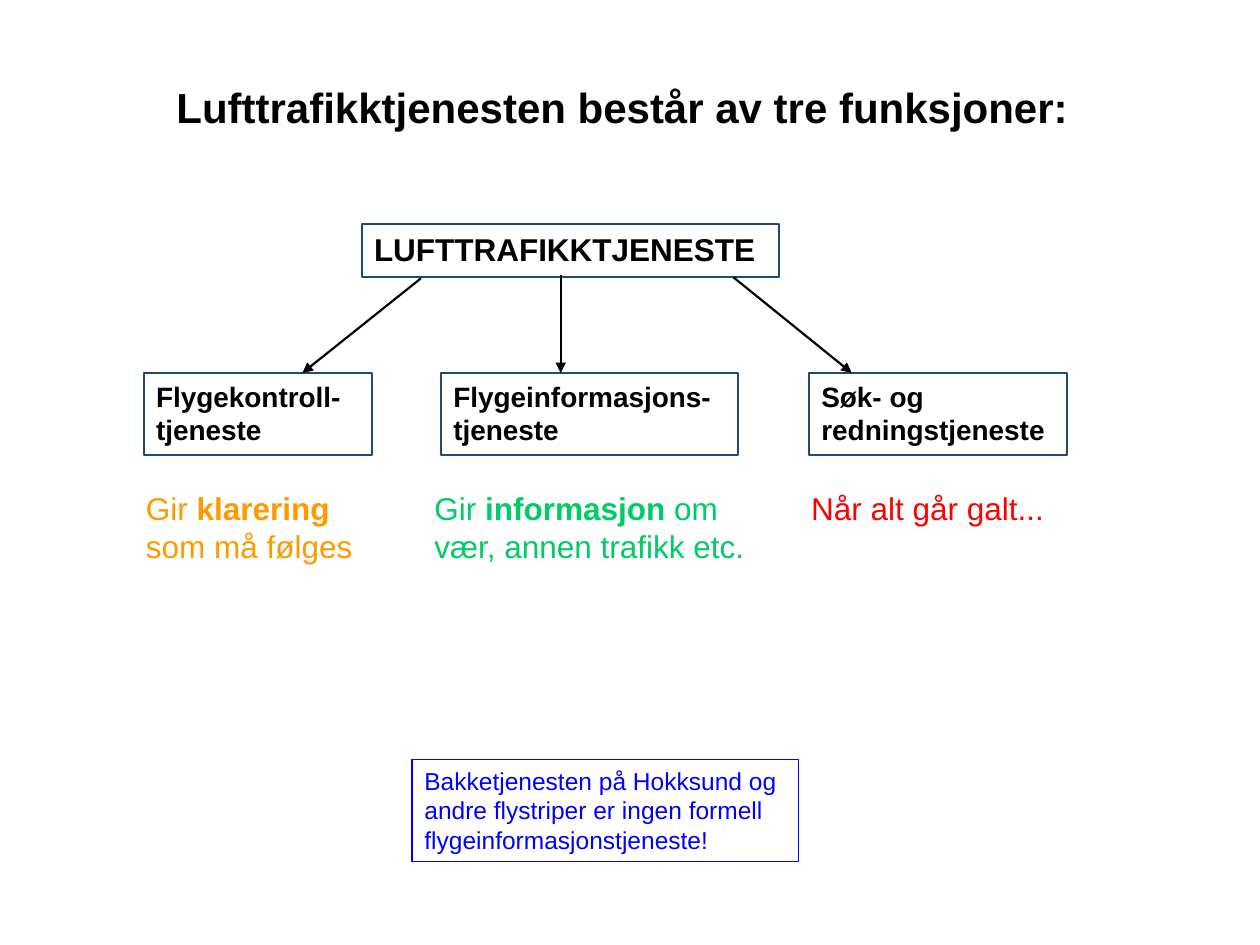
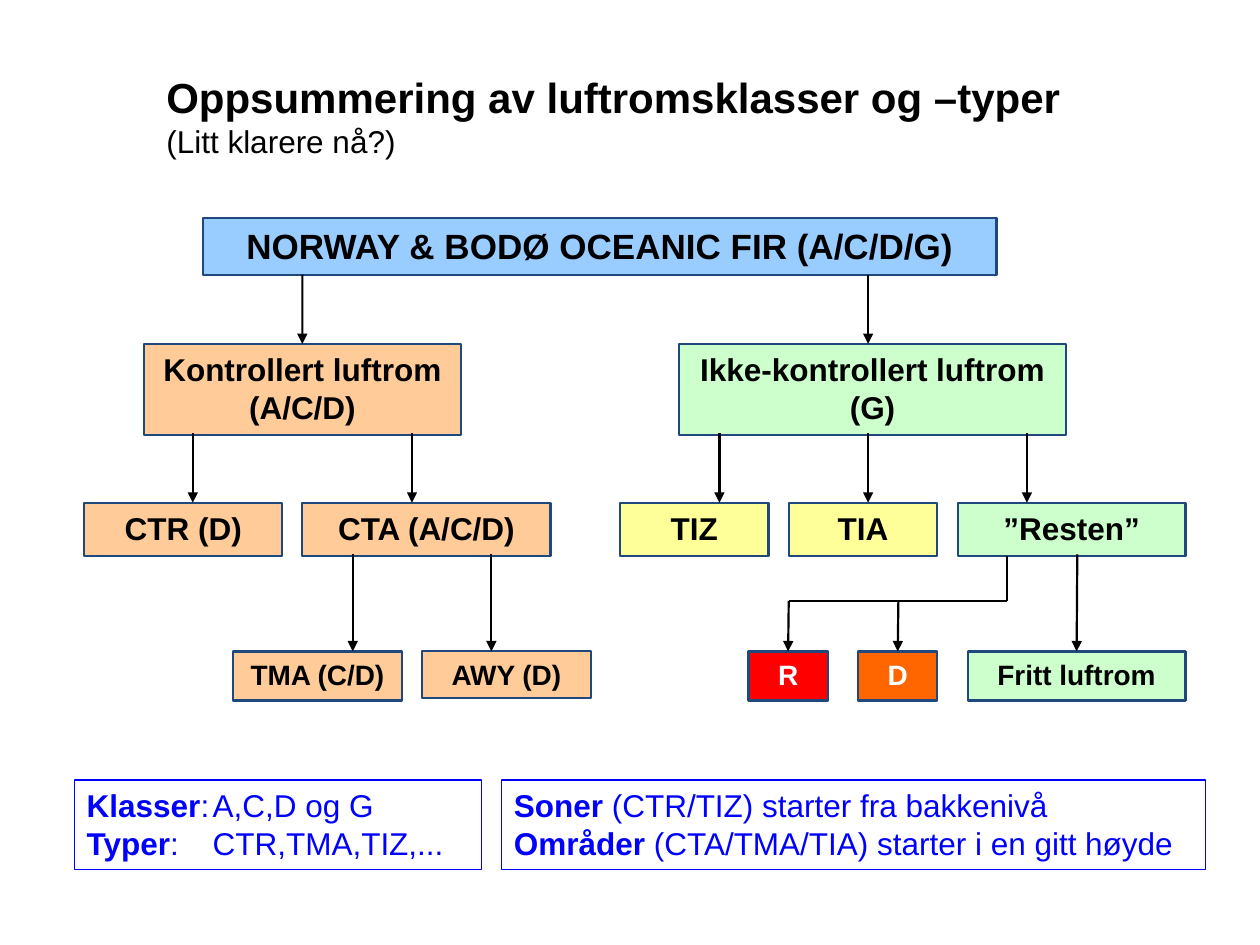
import pptx
import pptx.util
import pptx.dml.color
import pptx.enum.shapes
import pptx.enum.text
import pptx.oxml.ns
import lxml.etree
from pptx.util import Inches

COLOURS = {
    "text": "000000", "white": "FFFFFF", "border": "1F497D", "note": "0000FF",
    "clearance": "FF9900", "information": "00CC66", "rescue": "FF0000",
    "region": "99CCFF", "controlled": "FFCC99", "uncontrolled": "CCFFCC",
    "traffic_information": "FFFF99", "restricted": "FF0000", "danger": "FF6600",
}
RECTANGLE = pptx.enum.shapes.MSO_SHAPE.RECTANGLE
LEFT = pptx.enum.text.PP_ALIGN.LEFT
CENTER = pptx.enum.text.PP_ALIGN.CENTER


def write_text(shape, runs, size, colour="text", align=LEFT, border=None, fill=None, border_width=1.25):
    """Fill a shape with one paragraph of (text, bold) runs; a newline breaks the line."""
    if border:
        shape.shadow.inherit = False
        shape.line.color.rgb = pptx.dml.color.RGBColor.from_string(COLOURS[border])
        shape.line.width = pptx.util.Pt(border_width)
        if fill:
            shape.fill.solid()
            shape.fill.fore_color.rgb = pptx.dml.color.RGBColor.from_string(COLOURS[fill])
        else:
            shape.fill.background()
    frame = shape.text_frame
    frame.word_wrap = True
    frame.auto_size = pptx.enum.text.MSO_AUTO_SIZE.NONE
    frame.vertical_anchor = pptx.enum.text.MSO_ANCHOR.TOP
    paragraph = frame.paragraphs[0]
    paragraph.alignment = align
    paragraph.font.name = "Arial"
    paragraph.font.size = pptx.util.Pt(size)
    paragraph.font.color.rgb = pptx.dml.color.RGBColor.from_string(COLOURS[colour])
    same_weight = len({bold for _, bold in runs}) == 1
    if same_weight:
        paragraph.font.bold = runs[0][1]
    for text, bold in runs:
        for number, line in enumerate(text.split("\n")):
            if number:
                paragraph.add_line_break()
            if line:
                run = paragraph.add_run()
                run.text = line
                if not same_weight:
                    run.font.bold = bold


def add_line(slide, start, end, arrow=True, target=None):
    """Draw a black line, joined to the top of the target if there is one."""
    connector = slide.shapes.add_connector(
        pptx.enum.shapes.MSO_CONNECTOR.STRAIGHT, *(Inches(value) for value in start + end))
    if target is not None:
        connector.end_connect(target, 0)
    connector.line.color.rgb = pptx.dml.color.RGBColor.from_string(COLOURS["text"])
    connector.line.width = pptx.util.Pt(1.25)
    if arrow:
        line = connector.line._get_or_add_ln()
        lxml.etree.SubElement(line, pptx.oxml.ns.qn("a:tailEnd"), type="triangle")
    lxml.etree.SubElement(connector._element.spPr, pptx.oxml.ns.qn("a:effectLst"))


presentation = pptx.Presentation()
presentation.slide_width = Inches(10)
presentation.slide_height = Inches(7.5)

# Slides and titles
titles = [
    ((1.3, 0.6, 8.03, 0.5), [("Lufttrafikktjenesten består av tre funksjoner:", True)]),
    ((1.22, 0.52, 7.32, 0.8), [("Oppsummering av luftromsklasser og –typer\n", True),
                               ("(Litt klarere nå?)", False)]),
]
for position, runs in titles:
    slide = presentation.slides.add_slide(presentation.slide_layouts[5])
    title = slide.shapes.title
    title.left, title.top, title.width, title.height = (Inches(value) for value in position)
    write_text(title, runs, 24)
services_slide, airspace_slide = presentation.slides
airspace_slide.shapes.title.text_frame.paragraphs[0].runs[-1].font.size = pptx.util.Pt(18)

# Slide 1: the service and its three functions
services = [
    (2.87, 1.78, 3.31, 0.42, "LUFTTRAFIKKTJENESTE", 18),
    (1.14, 2.96, 1.81, 0.65, "Flygekontroll-\ntjeneste", 16),
    (3.5, 2.96, 2.36, 0.65, "Flygeinformasjons-\ntjeneste", 16),
    (6.42, 2.96, 2.05, 0.65, "Søk- og\nredningstjeneste", 16),
]
for *position, text, size in services:
    box = services_slide.shapes.add_shape(RECTANGLE, *(Inches(value) for value in position))
    write_text(box, [(text, True)], size, border="border")

for start, end in [((4.45, 2.18), (4.45, 2.96)), ((5.82, 2.2), (6.76, 2.96)),
                   ((3.34, 2.21), (2.4, 2.96))]:
    add_line(services_slide, start, end)

# Slide 1: what each function gives
explanations = [
    (1.06, 1.89, 0.7, "clearance",
     [("Gir ", False), ("klarering", True), (" som må følges", False)]),
    (3.35, 2.76, 0.7, "information",
     [("Gir ", False), ("informasjon", True), (" om vær, annen trafikk etc.", False)]),
    (6.34, 2.76, 0.4, "rescue", [("Når alt går galt...", False)]),
]
for left, width, height, colour, runs in explanations:
    box = services_slide.shapes.add_textbox(
        Inches(left), Inches(3.83), Inches(width), Inches(height))
    write_text(box, runs, 18, colour)

# Slide 2: airspace tree, one row per level
levels = [
    (1.73, 0.45, 20, [(1.61, 6.3, "NORWAY & BODØ OCEANIC FIR (A/C/D/G)", "region")]),
    (2.73, 0.72, 18, [(1.14, 2.52, "Kontrollert luftrom (A/C/D)", "controlled"),
                      (5.39, 3.07, "Ikke-kontrollert luftrom (G)", "uncontrolled")]),
    (3.99, 0.42, 18, [(0.67, 1.57, "CTR (D)", "controlled"),
                      (2.4, 1.97, "CTA (A/C/D)", "controlled"),
                      (4.92, 1.18, "TIZ", "traffic_information"),
                      (6.26, 1.18, "TIA", "traffic_information"),
                      (7.6, 1.81, "”Resten”", "uncontrolled")]),
    (5.17, 0.39, 16, [(1.85, 1.34, "TMA (C/D)", "controlled"),
                      (3.35, 1.34, "AWY (D)", "controlled"),
                      (5.94, 0.63, "R", "restricted"),
                      (6.81, 0.63, "D", "danger"),
                      (7.68, 1.73, "Fritt luftrom", "uncontrolled")]),
]
boxes = {}
for top, height, size, row in levels:
    for left, width, text, fill in row:
        box = airspace_slide.shapes.add_shape(
            RECTANGLE, Inches(left), Inches(top), Inches(width), Inches(height))
        colour = "white" if fill in ("restricted", "danger") else "text"
        write_text(box, [(text, True)], size, colour, CENTER, "border", fill)
        boxes[text] = box
boxes["AWY (D)"].height = Inches(0.37)

# Slide 2: vertical arrows between the levels
arrows = [
    (2.18, 2.73, [(2.4, "Kontrollert luftrom (A/C/D)"), (6.89, None)]),
    (3.44, 3.99, [(x, None) for x in (1.53, 3.27, 5.71, 6.89, 8.15)]),
    (4.4, 5.17, [(2.8, None), (3.9, None), (8.55, "Fritt luftrom")]),
    (4.77, 5.17, [(6.26, "R"), (7.13, "D")]),
]
for top, bottom, columns in arrows:
    for x, target in columns:
        add_line(airspace_slide, (x, top), (x, bottom), target=boxes.get(target))

# Slide 2: branch from the rest to R and D
branch = [(6.26, 4.77), (7.13, 4.77), (7.99, 4.77), (7.99, 4.41)]
for start, end in zip(branch, branch[1:]):
    add_line(airspace_slide, start, end, arrow=False)

# Blue notes at the foot of both slides
notes = [
    (services_slide, (3.27, 6.03, 3.07, 0.81), 14,
     [("Bakketjenesten på Hokksund og andre flystriper er ingen formell "
       "flygeinformasjonstjeneste!", False)]),
    (airspace_slide, (0.59, 6.19, 3.23, 0.71), 18,
     [("Klasser", True), (":\tA,C,D og G\n", False),
      ("Typer", True), (":\tCTR,TMA,TIZ,...", False)]),
    (airspace_slide, (3.98, 6.19, 5.59, 0.71), 18,
     [("Soner", True), (" (CTR/TIZ) starter fra bakkenivå\n", False),
      ("Områder", True), (" (CTA/TMA/TIA) starter i en gitt høyde", False)]),
]
for slide, position, size, runs in notes:
    box = slide.shapes.add_shape(RECTANGLE, *(Inches(value) for value in position))
    write_text(box, runs, size, "note", border="note", border_width=0.75)

presentation.save("out.pptx")
